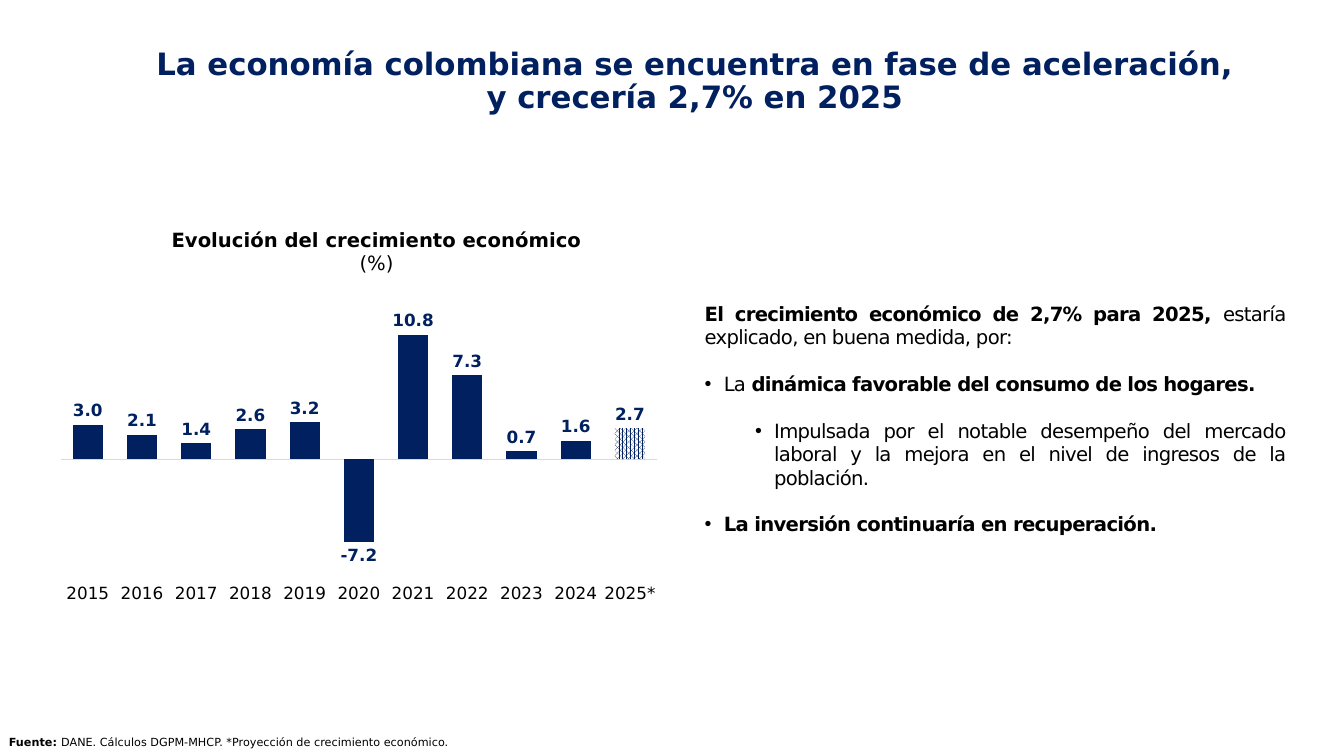
from lxml import etree
from pptx import Presentation
from pptx.chart.data import CategoryChartData
from pptx.dml.color import RGBColor
from pptx.enum.chart import (XL_CHART_TYPE, XL_LABEL_POSITION, XL_TICK_LABEL_POSITION,
                             XL_TICK_MARK)
from pptx.enum.dml import MSO_PATTERN
from pptx.enum.text import MSO_ANCHOR, MSO_AUTO_SIZE, PP_ALIGN
from pptx.oxml.ns import qn
from pptx.util import Emu, Pt

PX = 9144  # 100 px to the inch
FONT = "DejaVu Sans"
COLORS = {"navy": "002060", "black": "000000", "white": "FFFFFF", "axis": "D9D9D9"}

LEFT, CENTER, JUSTIFY = PP_ALIGN.LEFT, PP_ALIGN.CENTER, PP_ALIGN.JUSTIFY
TOP, MIDDLE = MSO_ANCHOR.TOP, MSO_ANCHOR.MIDDLE
GROW = MSO_AUTO_SIZE.SHAPE_TO_FIT_TEXT

GROWTH = {"2015": 3.0, "2016": 2.1, "2017": 1.4, "2018": 2.6, "2019": 3.2, "2020": -7.2,
          "2021": 10.8, "2022": 7.3, "2023": 0.7, "2024": 1.6, "2025*": 2.7}

BULLET_HANG = 19
# Each driver: left indent in px (None for no bullet), then (text, bold) runs
DRIVERS = [
    (None, [("El crecimiento económico de 2,7% para 2025, ", True),
            ("estaría explicado, en buena medida, por:", False)]),
    (19, [("La ", False), ("dinámica favorable del consumo de los hogares.", True)]),
    (69, [("Impulsada por el notable desempeño del mercado laboral y la mejora en el "
           "nivel de ingresos de la población.", False)]),
    (19, [("La inversión continuaría en recuperación.", True)]),
]


def px(length):
    return Emu(length * PX)


def rgb(name):
    return RGBColor.from_string(COLORS[name])


def style_font(font, size, color, bold=None):
    font.name = FONT
    font.size = Pt(size)
    font.color.rgb = rgb(color)
    font.bold = bold


def add_text_frame(slide, left, top, width, height, anchor=TOP):
    frame = slide.shapes.add_textbox(px(left), px(top), px(width), px(height)).text_frame
    frame.word_wrap = True
    frame.vertical_anchor = anchor
    return frame


def write_paragraph(paragraph, runs, size, color, align, spacing=None):
    """Fill a paragraph with (text, bold) runs; spacing is in hundredths of a point."""
    paragraph.alignment = align
    style_font(paragraph.font, size, color)
    for text, bold in runs:
        run = paragraph.add_run()
        run.text = text
        run.font.bold = bold
        if spacing is not None:
            run.font._element.set("spc", str(spacing))


def add_bullet(paragraph, indent):
    properties = paragraph._p.get_or_add_pPr()
    properties.set("marL", str(px(indent)))
    properties.set("indent", str(-px(BULLET_HANG)))
    etree.SubElement(properties, qn("a:buFont")).set("typeface", "Arial")
    etree.SubElement(properties, qn("a:buChar")).set("char", "•")


def add_title(slide):
    title = add_text_frame(slide, 138, 4, 1102, 155, MIDDLE).paragraphs[0]
    write_paragraph(title, [("La economía colombiana se encuentra en fase de aceleración, "
                             "y crecería 2,7% en 2025", True)], 22, "navy", CENTER)
    title.line_spacing = 0.9


def add_source_note(slide):
    note = add_text_frame(slide, -1, 725, 954, 24)
    note.auto_size = GROW
    write_paragraph(note.paragraphs[0],
                    [("Fuente: ", True),
                     ("DANE. Cálculos DGPM-MHCP. *Proyección de crecimiento económico.", False)],
                    8, "black", LEFT)


def add_drivers(slide):
    drivers = add_text_frame(slide, 689, 338, 596, 155, MIDDLE)
    for number, (indent, runs) in enumerate(DRIVERS):
        paragraph = drivers.add_paragraph() if number else drivers.paragraphs[0]
        if number:
            paragraph.space_before = Pt(16.5)
        if indent is not None:
            add_bullet(paragraph, indent)
            paragraph.level = int(indent > BULLET_HANG)
        write_paragraph(paragraph, runs, 14, "black", JUSTIFY, spacing=-50)


def add_chart_heading(slide):
    heading = add_text_frame(slide, 81, 221, 585, 57)
    heading.auto_size = GROW
    write_paragraph(heading.paragraphs[0], [("Evolución del crecimiento económico", True)],
                    14, "black", CENTER)
    write_paragraph(heading.add_paragraph(), [("(%)", False)], 14, "black", CENTER)


def add_growth_chart(slide):
    data = CategoryChartData(number_format="0.0")
    data.categories = list(GROWTH)
    data.add_series("Crecimiento económico", list(GROWTH.values()))
    chart = slide.shapes.add_chart(XL_CHART_TYPE.COLUMN_CLUSTERED, px(48), px(278),
                                   px(616), px(328), data).chart
    chart.has_legend = False
    chart.has_title = False
    style_font(chart.font, 12, "black")

    years = chart.category_axis
    years.tick_label_position = XL_TICK_LABEL_POSITION.LOW
    years.major_tick_mark = XL_TICK_MARK.NONE
    years.format.line.color.rgb = rgb("axis")
    years.format.line.width = Pt(0.75)
    style_font(years.tick_labels.font, 12, "black")

    rates = chart.value_axis
    rates.visible = False
    rates.has_major_gridlines = False
    rates.minimum_scale, rates.maximum_scale = -10, 15

    plot = chart.plots[0]
    plot.gap_width = 80
    plot.vary_by_categories = False
    growth = plot.series[0]
    growth.invert_if_negative = False
    growth.format.fill.solid()
    growth.format.fill.fore_color.rgb = rgb("navy")

    projection = growth.points[len(GROWTH) - 1].format.fill
    projection.patterned()
    projection.pattern = MSO_PATTERN.PERCENT_75
    projection.fore_color.rgb = rgb("navy")
    projection.back_color.rgb = rgb("white")

    labels = growth.data_labels
    labels.show_value = True
    labels.number_format = "0.0"
    labels.number_format_is_linked = False
    labels.position = XL_LABEL_POSITION.OUTSIDE_END
    style_font(labels.font, 12, "navy", bold=True)


def main():
    presentation = Presentation()
    presentation.slide_width, presentation.slide_height = px(1333), px(750)
    slide = presentation.slides.add_slide(presentation.slide_layouts[6])
    add_title(slide)
    add_source_note(slide)
    add_drivers(slide)
    add_chart_heading(slide)
    add_growth_chart(slide)
    presentation.save("out.pptx")


if __name__ == "__main__":
    main()
